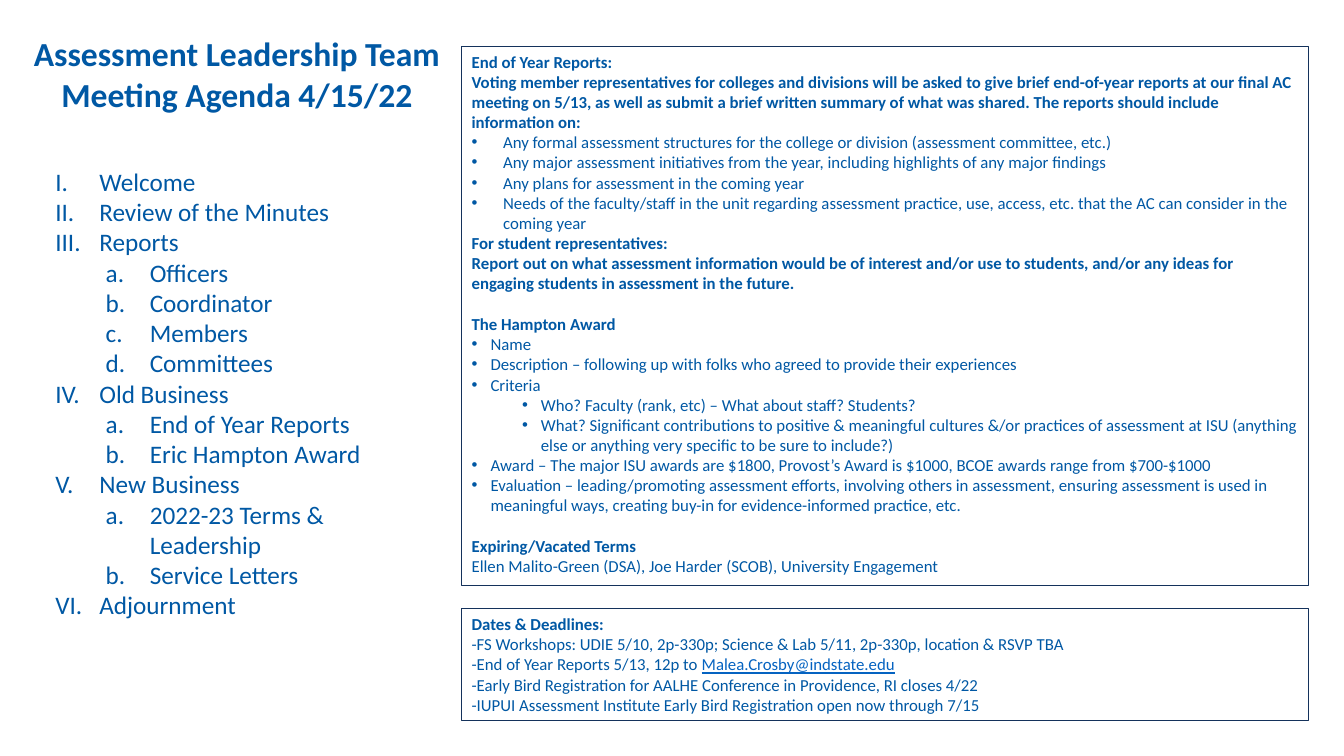
"""Build the assessment meeting agenda slide."""
from dataclasses import dataclass
from typing import Optional

from lxml.etree import SubElement
from pptx import Presentation
from pptx.dml.color import RGBColor
from pptx.enum.shapes import MSO_SHAPE
from pptx.enum.text import MSO_ANCHOR, PP_ALIGN
from pptx.oxml.ns import qn
from pptx.util import Pt

BLUE = RGBColor(0x00, 0x58, 0xA4)
NAVY = RGBColor(0x14, 0x32, 0x5B)
LINK = RGBColor(0x05, 0x63, 0xC1)
FONT = "Calibri"
BLANK_LINE = 14.65
LEVEL_STEP = 36


@dataclass(frozen=True)
class Marker:
    tag: str
    attribute: str
    value: str
    hang: float


@dataclass(frozen=True)
class Line:
    text: str
    marker: Optional[Marker] = None
    level: int = 0
    bold: bool = False
    before: float = 0
    link: str = ""


@dataclass(frozen=True)
class Panel:
    top: float
    height: float
    lines: list[Line]


ROMAN = Marker("a:buAutoNum", "type", "romanUcPeriod", 31.5)
LETTER = Marker("a:buAutoNum", "type", "alphaLcPeriod", 31.5)
WIDE_BULLET = Marker("a:buChar", "char", "•", 22.5)
BULLET = Marker("a:buChar", "char", "•", 13.5)

AGENDA = [
    ("Welcome", []),
    ("Review of the Minutes", []),
    ("Reports", ["Officers", "Coordinator", "Members", "Committees"]),
    ("Old Business", ["End of Year Reports", "Eric Hampton Award"]),
    ("New Business", ["2022-23 Terms & Leadership", "Service Letters"]),
    ("Adjournment", []),
]

TITLE = [
    Line("Assessment Leadership Team", bold=True),
    Line("Meeting Agenda 4/15/22", bold=True),
]

REPORTS = [
    Line("End of Year Reports:", bold=True),
    Line("Voting member representatives for colleges and divisions will be asked to give brief "
         "end-of-year reports at our final AC meeting on 5/13, as well as submit a brief written "
         "summary of what was shared. The reports should include information on:", bold=True),
    Line("Any formal assessment structures for the college or division (assessment committee, etc.)",
         WIDE_BULLET),
    Line("Any major assessment initiatives from the year, including highlights of any major findings",
         WIDE_BULLET),
    Line("Any plans for assessment in the coming year", WIDE_BULLET),
    Line("Needs of the faculty/staff in the unit regarding assessment practice, use, access, etc. "
         "that the AC can consider in the coming year", WIDE_BULLET),
    Line("For student representatives:", bold=True),
    Line("Report out on what assessment information would be of interest and/or use to students, "
         "and/or any ideas for engaging students in assessment in the future.", bold=True),
    Line("The Hampton Award", bold=True, before=BLANK_LINE),
    Line("Name", BULLET),
    Line("Description – following up with folks who agreed to provide their experiences", BULLET),
    Line("Criteria", BULLET),
    Line("Who? Faculty (rank, etc) – What about staff? Students?", BULLET, level=1),
    Line("What? Significant contributions to positive & meaningful cultures &/or practices of "
         "assessment at ISU (anything else or anything very specific to be sure to include?)",
         BULLET, level=1),
    Line("Award – The major ISU awards are $1800, Provost’s Award is $1000, BCOE awards range "
         "from $700-$1000", BULLET),
    Line("Evaluation – leading/promoting assessment efforts, involving others in assessment, "
         "ensuring assessment is used in meaningful ways, creating buy-in for evidence-informed "
         "practice, etc.", BULLET),
    Line("Expiring/Vacated Terms", bold=True, before=BLANK_LINE),
    Line("Ellen Malito-Green (DSA), Joe Harder (SCOB), University Engagement"),
]

DEADLINES = [
    Line("Dates & Deadlines:", bold=True),
    Line("-FS Workshops: UDIE 5/10, 2p-330p; Science & Lab 5/11, 2p-330p, location & RSVP TBA"),
    Line("-End of Year Reports 5/13, 12p to ", link="Malea.Crosby@indstate.edu"),
    Line("-Early Bird Registration for AALHE Conference in Providence, RI closes 4/22"),
    Line("-IUPUI Assessment Institute Early Bird Registration open now through 7/15"),
]

PANELS = [Panel(33.1, 385.2, REPORTS), Panel(434.9, 79.9, DEADLINES)]


def add_run(paragraph, text: str, *, size: float, bold: bool = False,
            color: RGBColor = BLUE, underline: bool = False) -> None:
    """Append formatted text to a paragraph."""
    run = paragraph.add_run()
    run.text = text
    run.font.name = FONT
    run.font.size = Pt(size)
    run.font.bold = bold
    run.font.underline = underline
    run.font.color.rgb = color


def add_marker(paragraph, marker: Marker, level: int) -> None:
    """Give a paragraph a hanging bullet or number."""
    properties = paragraph._p.get_or_add_pPr()
    properties.set("marL", str(Pt(marker.hang + LEVEL_STEP * level)))
    properties.set("indent", str(-Pt(marker.hang)))
    SubElement(properties, qn("a:buFont")).set(
        "typeface", "Arial" if marker.tag == "a:buChar" else "+mj-lt")
    SubElement(properties, qn(marker.tag)).set(marker.attribute, marker.value)


def fill_text(shape, lines: list[Line], *, size: float,
              alignment: PP_ALIGN = PP_ALIGN.LEFT) -> None:
    """Write lines into a shape, one paragraph each."""
    frame = shape.text_frame
    frame.word_wrap = True
    frame.vertical_anchor = MSO_ANCHOR.TOP
    for index, line in enumerate(lines):
        paragraph = frame.add_paragraph() if index else frame.paragraphs[0]
        paragraph.level = line.level
        if line.marker:
            add_marker(paragraph, line.marker, line.level)
        paragraph.alignment = alignment
        if line.before:
            paragraph.space_before = Pt(line.before)
        add_run(paragraph, line.text, size=size, bold=line.bold)
        if line.link:
            add_run(paragraph, line.link, size=size, color=LINK, underline=True)


def add_panel(slide, panel: Panel) -> None:
    """Draw one outlined panel with its text."""
    shape = slide.shapes.add_shape(MSO_SHAPE.RECTANGLE, Pt(329.8), Pt(panel.top),
                                   Pt(604.8), Pt(panel.height))
    shape.shadow.inherit = False
    shape.fill.background()
    shape.line.color.rgb = NAVY
    shape.line.width = Pt(0.75)
    fill_text(shape, panel.lines, size=12)


def agenda_lines() -> list[Line]:
    """Flatten the agenda into numbered lines."""
    lines = []
    for topic, items in AGENDA:
        lines.append(Line(topic, ROMAN))
        lines.extend(Line(item, LETTER, level=1) for item in items)
    return lines


def main() -> None:
    """Build and save the slide."""
    presentation = Presentation()
    presentation.slide_width = Pt(960)
    presentation.slide_height = Pt(540)
    slide = presentation.slides.add_slide(presentation.slide_layouts[6])
    agenda = slide.shapes.add_textbox(Pt(32.4), Pt(115.2), Pt(274.3), Pt(334.1))
    fill_text(agenda, agenda_lines(), size=18)
    title = slide.shapes.add_textbox(Pt(-8.6), Pt(20.2), Pt(355.7), Pt(65.5))
    fill_text(title, TITLE, size=24, alignment=PP_ALIGN.CENTER)
    for panel in PANELS:
        add_panel(slide, panel)
    presentation.save("out.pptx")


if __name__ == "__main__":
    main()
